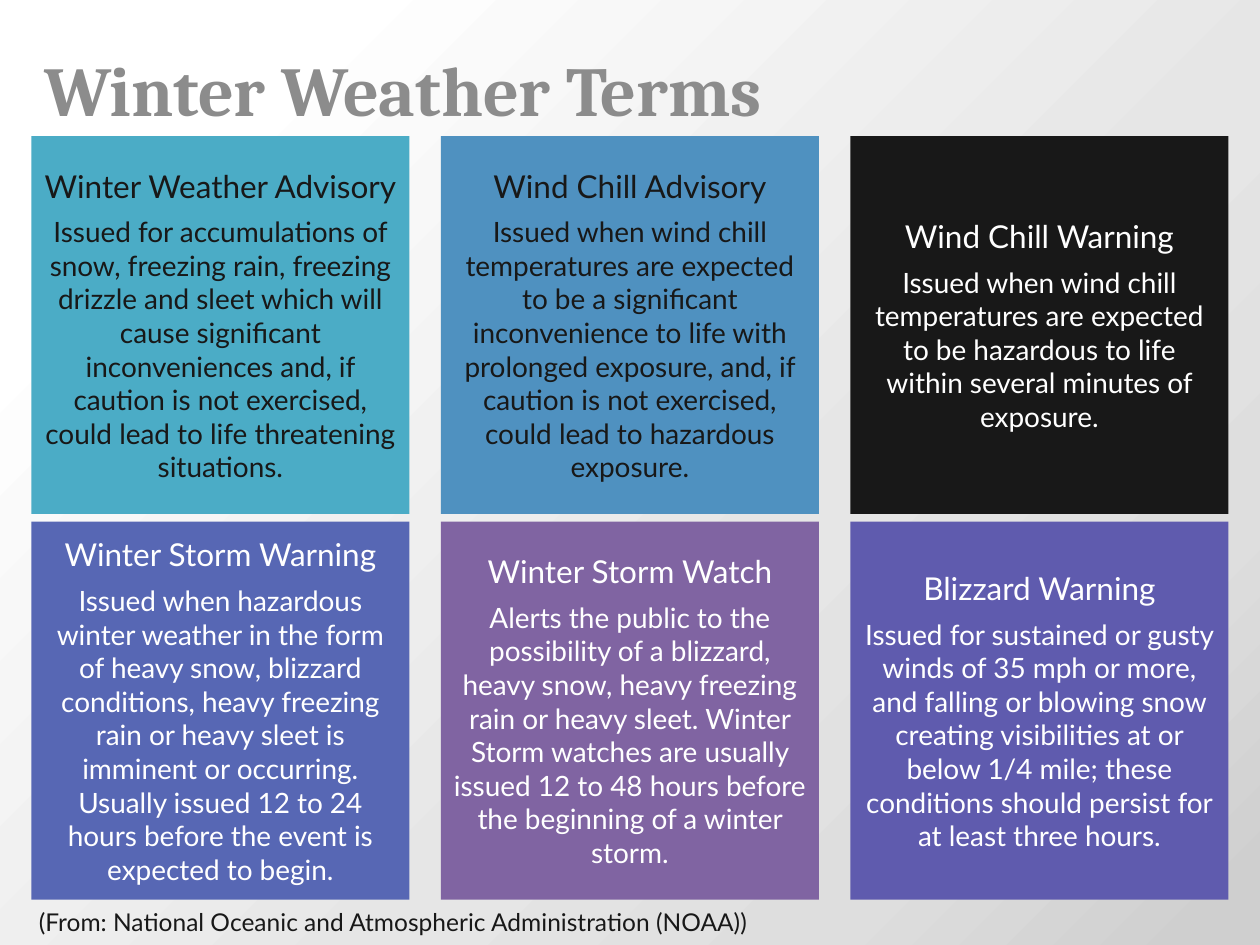
from copy import deepcopy

from pptx import Presentation
from pptx.dml.color import RGBColor
from pptx.enum.shapes import MSO_SHAPE
from pptx.enum.text import MSO_ANCHOR as ANCHOR, MSO_AUTO_SIZE as AUTO_SIZE, PP_ALIGN as ALIGN
from pptx.oxml.ns import qn
from pptx.util import Inches, Pt

TITLE = "Winter Weather Terms"
SOURCE = "(From:\u00a0National Oceanic and Atmospheric Administration (NOAA))".replace("\u00a0", " ")
TERMS = [
    ("Winter Weather Advisory", "4BACC6", "dark",
     "Issued for accumulations of snow, freezing rain, freezing drizzle and sleet which will cause "
     "significant inconveniences and, if caution is not exercised, could lead to life threatening situations."),
    ("Wind Chill Advisory", "4F91C0", "dark",
     "Issued when wind chill temperatures are expected to be a significant inconvenience to life with "
     "prolonged exposure, and, if caution is not exercised, could lead to hazardous exposure."),
    ("Wind Chill Warning", "181818", "light",
     "Issued when wind chill temperatures are expected to be hazardous to life within several minutes "
     "of exposure."),
    ("Winter Storm Warning", "5767B4", "light",
     "Issued when hazardous winter weather in the form of heavy snow, blizzard conditions, heavy freezing "
     "rain or heavy sleet is imminent or occurring. Usually issued 12 to 24 hours before the event is "
     "expected to begin."),
    ("Winter Storm Watch", "8064A2", "light",
     "Alerts the public to the possibility of a blizzard, heavy snow, heavy freezing rain or heavy sleet. "
     "Winter Storm watches are usually issued 12 to 48 hours before the beginning of a winter storm."),
    ("Blizzard Warning", "5F5BAE", "light",
     "Issued for sustained or gusty winds of 35 mph or more, and falling or blowing snow creating "
     "visibilities at or below 1/4 mile; these conditions should persist for at least three hours."),
]

THEME = {
    "dark": "181818",
    "light": "FFFFFF",
    "background": [(0.15, "FFFFFF"), (0.6, "E6E6E6"), (0.8, "DEDEDE"), (0.97, "CFCFCF")],
    "title": {"name": "Cambria", "size": Pt(40), "bold": True, "color": "8C8C8C"},
    "term": {"name": "Lato", "size": Pt(18)},
    "meaning": {"name": "Lato", "size": Pt(16)},
    "source": {"name": "Lato", "size": Pt(14), "color": "181818"},
}
COLUMNS = 3
LEFT, TOP, SIDE = 0.25, 1.08, 3
COLUMN_STEP, ROW_STEP = 3.25, 3.06


def write(para, text, style, **changes):
    span = para.add_run()
    span.text = text
    for name, value in {**style, **changes}.items():
        if name == "color":
            span.font.color.rgb = RGBColor.from_string(value)
        else:
            setattr(span.font, name, value)


def place(box, left, top, width, height):
    for name, value in zip(("left", "top", "width", "height"), (left, top, width, height)):
        setattr(box, name, Inches(value))


def paint_background(page):
    fill = page.background.fill
    fill.gradient()
    fill.gradient_angle = 315
    stop_list = page.background._cSld.find(".//" + qn("a:gsLst"))
    for stop in list(stop_list):
        stop_list.append(deepcopy(stop))
    for stop, (position, color) in zip(fill.gradient_stops, THEME["background"]):
        stop.position = position
        stop.color.rgb = RGBColor.from_string(color)


def add_term(group, index, term, fill, ink, meaning):
    row, column = divmod(index, COLUMNS)
    box = group.shapes.add_shape(
        MSO_SHAPE.RECTANGLE, Inches(LEFT + column * COLUMN_STEP), Inches(TOP + row * ROW_STEP),
        Inches(SIDE), Inches(SIDE))
    box.shadow.inherit = False
    box.fill.solid()
    box.fill.fore_color.rgb = RGBColor.from_string(fill)
    box.line.fill.background()
    frame = box.text_frame
    frame.word_wrap = True
    frame.vertical_anchor = ANCHOR.MIDDLE
    heading, body = frame.paragraphs[0], frame.add_paragraph()
    heading.space_after = Pt(6)
    for para, text, style in ((heading, term, "term"), (body, meaning, "meaning")):
        para.alignment = ALIGN.CENTER
        write(para, text, THEME[style], color=THEME[ink])


def main():
    deck = Presentation()
    deck.slide_width, deck.slide_height = Inches(10), Inches(7.5)
    page = deck.slides.add_slide(deck.slide_layouts[5])
    paint_background(page)

    title = page.shapes.title
    place(title, 0.25, 0.25, 9.5, 0.9)
    title.text_frame.vertical_anchor = ANCHOR.MIDDLE
    para = title.text_frame.paragraphs[0]
    para.alignment = ALIGN.LEFT
    write(para, TITLE, THEME["title"])

    group = page.shapes.add_group_shape()
    for index, entry in enumerate(TERMS):
        add_term(group, index, *entry)

    source = page.shapes.add_textbox(0, 0, 0, 0)
    place(source, 0.21, 7.15, 9.54, 0.34)
    source.text_frame.word_wrap = True
    source.text_frame.auto_size = AUTO_SIZE.SHAPE_TO_FIT_TEXT
    write(source.text_frame.paragraphs[0], SOURCE, THEME["source"])

    deck.save("out.pptx")


if __name__ == "__main__":
    main()
